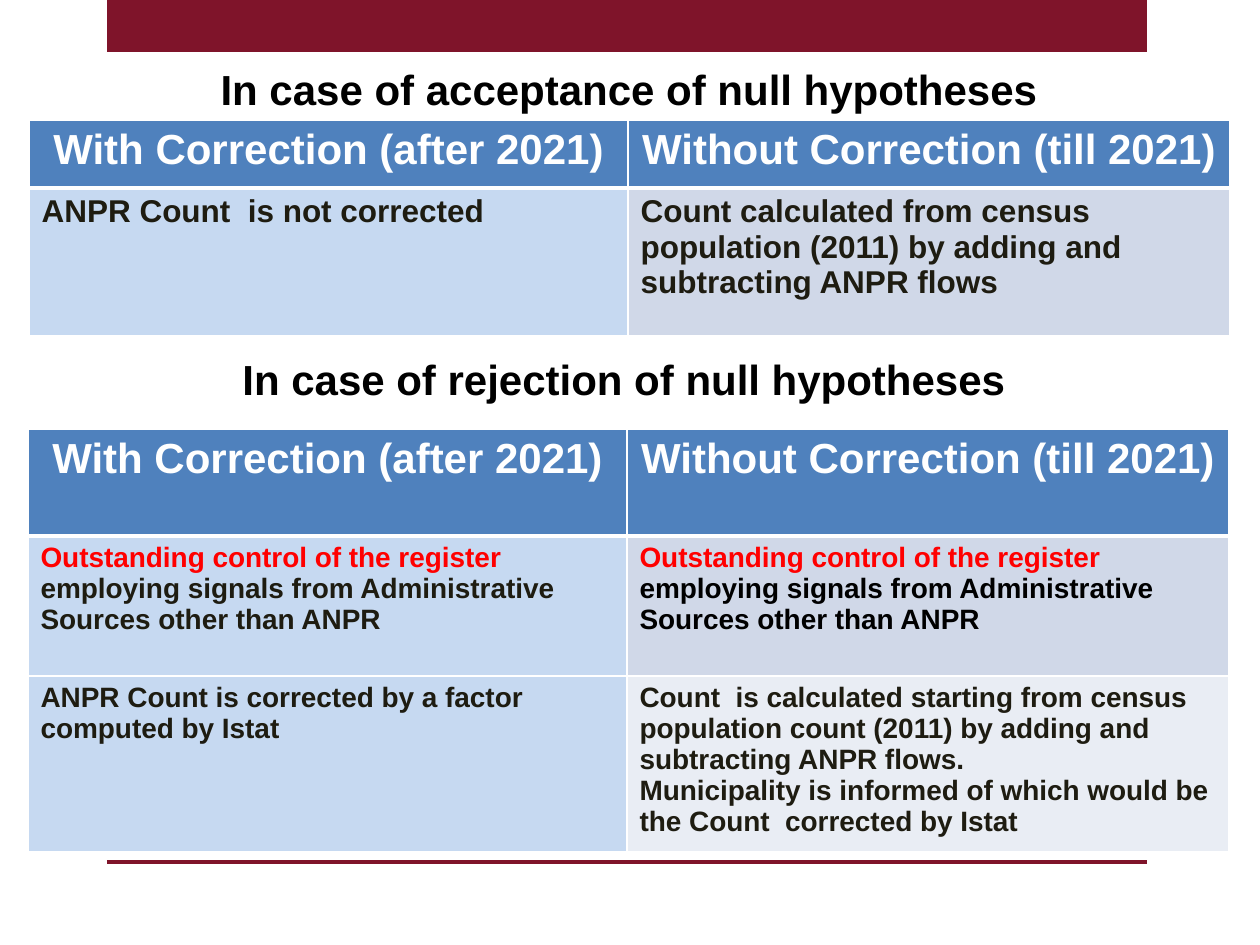
from lxml import etree
from pptx import Presentation
from pptx.dml.color import RGBColor
from pptx.enum.shapes import MSO_CONNECTOR, MSO_SHAPE
from pptx.enum.text import MSO_ANCHOR, MSO_AUTO_SIZE, PP_ALIGN
from pptx.oxml.ns import qn
from pptx.util import Emu, Pt

RECT, LINE = MSO_SHAPE.RECTANGLE, MSO_CONNECTOR.STRAIGHT
CENTER, LEFT = PP_ALIGN.CENTER, PP_ALIGN.LEFT
MIDDLE, NO_FIT = MSO_ANCHOR.MIDDLE, MSO_AUTO_SIZE.NONE

# Content: a cell is a list of paragraphs, a paragraph a list of (text, colour)
COLORS = {"maroon": "7F142A", "header": "4F81BD", "blue": "C6D9F1",
          "band": "D0D8E8", "pale": "E9EDF4", "white": "FFFFFF",
          "black": "000000", "dark": "1E1C11", "red": "FF0000"}
FONT = "Arial"
HEADING_PT = 24
HEADER = ["With Correction (after 2021)", "Without Correction (till 2021)"]
CONTROL = "Outstanding control of the register "
SIGNALS = "employing signals from Administrative Sources other than ANPR"

ACCEPTANCE = "In case of acceptance of null hypotheses"
ACCEPTANCE_ROWS = [
    [[[("ANPR Count  is not corrected", "dark")]],
     [[("Count calculated from census population (2011) by adding and "
        "subtracting ANPR flows", "dark")]]],
]
REJECTION = "In case of rejection of null hypotheses"
REJECTION_ROWS = [
    [[[(CONTROL, "red"), (SIGNALS, "dark")]],
     [[(CONTROL, "red"), (SIGNALS, "black")]]],
    [[[("ANPR Count is corrected by a factor computed by Istat", "dark")]],
     [[("Count  is calculated starting from census population count (2011) "
        "by adding and subtracting ANPR flows.", "dark")],
      [("Municipality is informed of which would be the Count  corrected "
        "by Istat", "dark")]]],
]

# Layout in px
SLIDE_W, SLIDE_H = 1260, 945
BAR = (107, 0, 1040, 52)
RULE_Y = 862
HEADING_W, HEADING_H = 1256, 60
COL_WIDTHS = (599, 602)
BODY_FILLS = [("blue", "band"), ("blue", "pale")]
# left, top, row heights, body size in points, body rows
TABLES = [(29, 120, (68, 148), 18, ACCEPTANCE_ROWS),
          (28, 429, (107, 140, 176), 16, REJECTION_ROWS)]


def px(n):
    return Emu(round(n * 914400 / 126))


def rgb(name):
    return RGBColor.from_string(COLORS[name])


def style(p, size, align):
    p.alignment = align
    p.font.name, p.font.size, p.font.bold = FONT, Pt(size), True


def write(tf, paragraphs, size, align):
    for i, runs in enumerate(paragraphs):
        p = tf.add_paragraph() if i else tf.paragraphs[0]
        style(p, size, align)
        for text, color in runs:
            r = p.add_run()
            r.text = text
            r.font.color.rgb = rgb(color)


def heading(sp, text, left, top):
    sp.left, sp.top = px(left), px(top)
    sp.width, sp.height = px(HEADING_W), px(HEADING_H)
    tf = sp.text_frame
    tf.word_wrap, tf.auto_size, tf.vertical_anchor = True, NO_FIT, MIDDLE
    write(tf, [[(text, "black")]], HEADING_PT, CENTER)


def borders(cell, bottom):
    tcPr = cell._tc.get_or_add_tcPr()
    for i, side in enumerate(("lnL", "lnR", "lnT", "lnB")):
        ln = etree.Element(qn("a:" + side))
        ln.set("w", str(Pt(bottom if side == "lnB" else 1)))
        fill = etree.SubElement(ln, qn("a:solidFill"))
        etree.SubElement(fill, qn("a:srgbClr")).set("val", COLORS["white"])
        tcPr.insert(i, ln)


def add_table(s, left, top, heights, body_pt, body):
    table = s.shapes.add_table(len(heights), len(COL_WIDTHS), px(left), px(top),
                               px(sum(COL_WIDTHS)), px(sum(heights))).table
    for col, width in zip(table.columns, COL_WIDTHS):
        col.width = px(width)
    header = [[[(text, "white")]] for text in HEADER]
    for r, (height, row) in enumerate(zip(heights, [header] + body)):
        table.rows[r].height = px(height)
        for c, paragraphs in enumerate(row):
            cell = table.cell(r, c)
            cell.fill.solid()
            cell.fill.fore_color.rgb = rgb(BODY_FILLS[r - 1][c] if r else "header")
            # A thick rule parts the header from the body
            borders(cell, 1 if r else 3)
            write(cell.text_frame, paragraphs, body_pt if r else HEADING_PT,
                  LEFT if r else CENTER)


def main():
    prs = Presentation()
    prs.slide_width, prs.slide_height = px(SLIDE_W), px(SLIDE_H)
    s = prs.slides.add_slide(prs.slide_layouts[5])

    # Top bar and bottom rule
    bar = s.shapes.add_shape(RECT, *map(px, BAR))
    bar.shadow.inherit = False
    bar.fill.solid()
    bar.fill.fore_color.rgb = rgb("maroon")
    bar.line.fill.background()
    rule = s.shapes.add_connector(LINE, px(BAR[0]), px(RULE_Y),
                                  px(BAR[0] + BAR[2]), px(RULE_Y))
    rule.line.color.rgb = rgb("maroon")
    rule.line.width = Pt(2)
    etree.SubElement(rule._element.spPr, qn("a:effectLst"))

    # Headings and tables
    heading(s.shapes.title, REJECTION, -4, 349)
    for spec_row in TABLES:
        add_table(s, *spec_row)
    heading(s.shapes.add_textbox(0, 0, 0, 0), ACCEPTANCE, 1, 59)

    prs.save("out.pptx")


if __name__ == "__main__":
    main()
